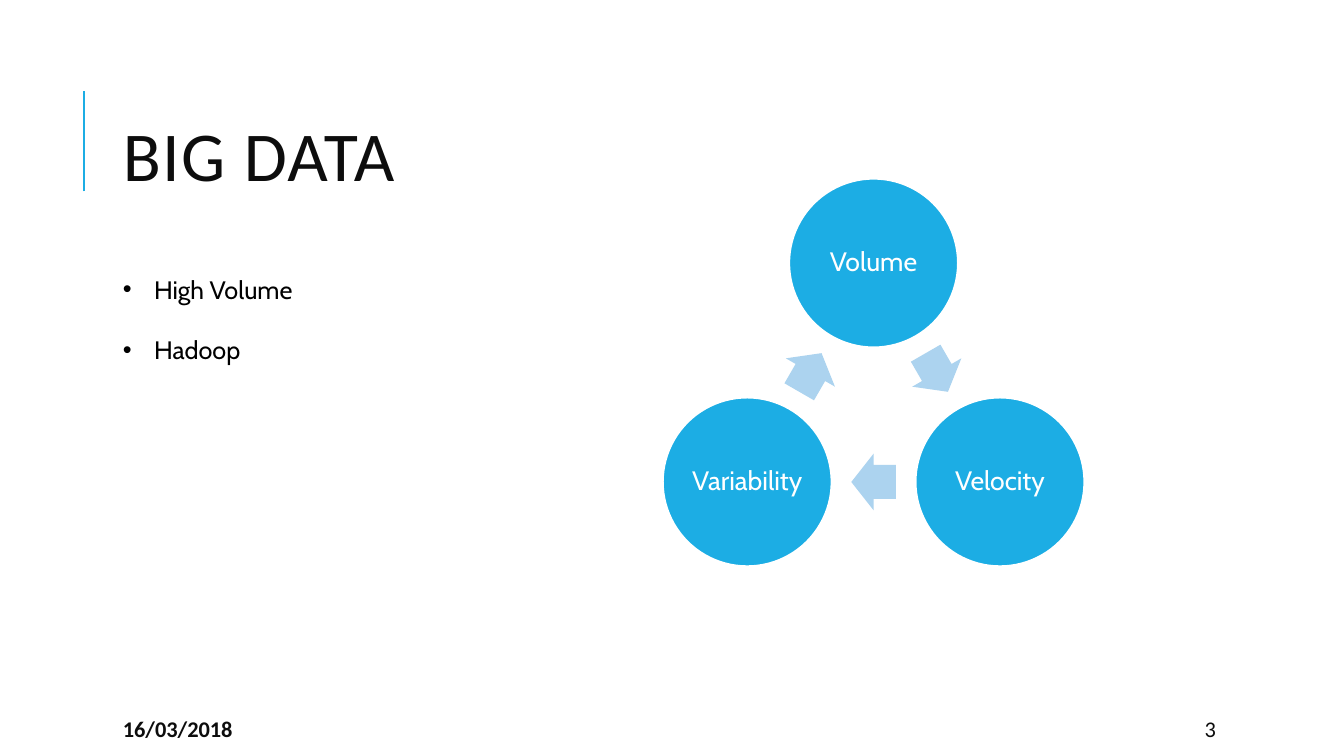
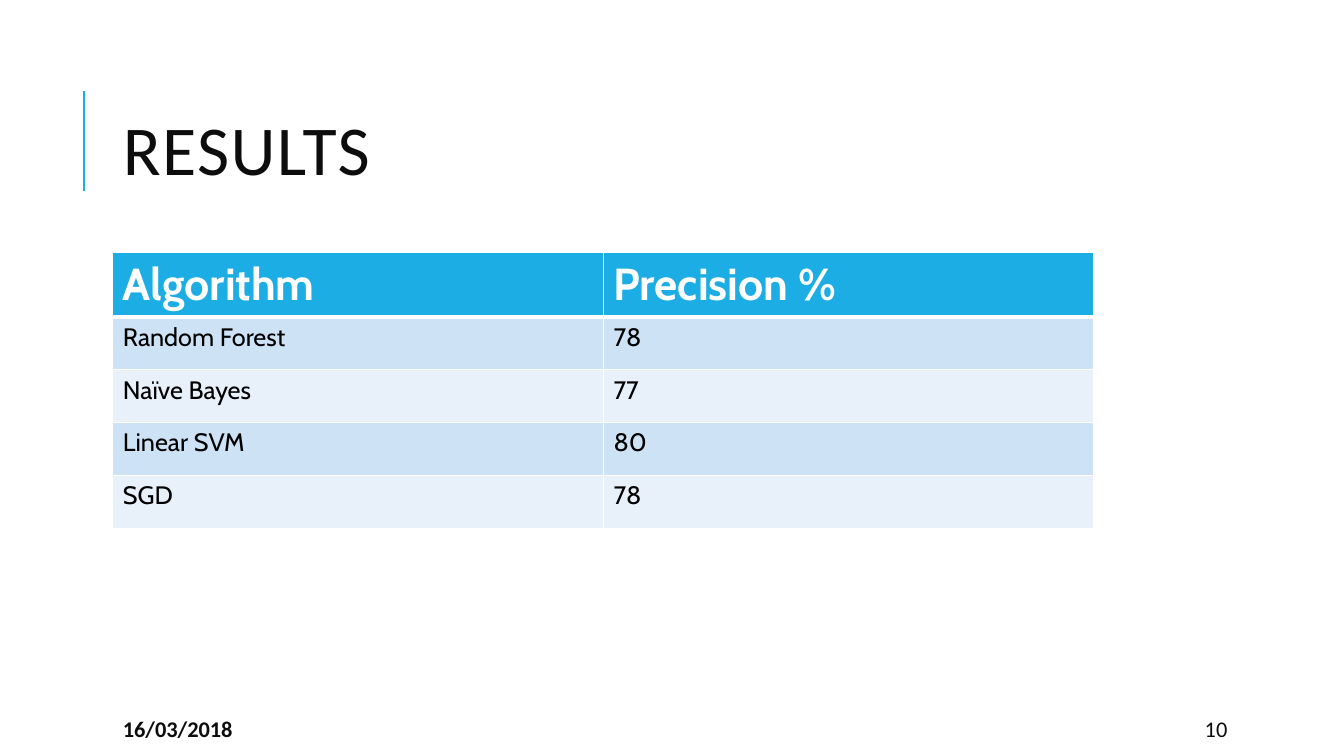
from dataclasses import dataclass
from math import cos, radians, sin

from lxml.etree import SubElement as Sub
from pptx import Presentation
from pptx.dml.color import RGBColor as Rgb
from pptx.enum.shapes import MSO_CONNECTOR as Link, MSO_SHAPE as Kind
from pptx.enum.text import MSO_ANCHOR as Anchor, PP_ALIGN as Align
from pptx.oxml import parse_xml
from pptx.oxml.ns import nsdecls, qn
from pptx.util import Inches, Pt


@dataclass(frozen=True)
class Theme:
    blue: str = "1CADE4"
    pale: str = "ACD3EF"
    bands: tuple = ("CDE3F5", "E8F1FA")
    ink: str = "0D0D0D"
    black: str = "000000"
    white: str = "FFFFFF"
    head: str = "Calibri"
    body: str = "Cabin"
    title: int = 50
    label: int = 32
    node: int = 19
    text: int = 18
    foot: int = 16


theme = Theme()
deck = Presentation()
deck.slide_width = Inches(13.33)
deck.slide_height = Inches(7.5)
col = deck.slide_width / 100
row = deck.slide_height / 100
left = 8.4


def write(para, text, size, color, face, bold=False):
    run = para.add_run()
    run.text = text
    font = run.font
    font.size, font.name, font.bold = Pt(size), face, bold
    font.color.rgb = Rgb.from_string(color)
    return run


def box(slide, x, y, wide, high, anchor=Anchor.MIDDLE):
    area = slide.shapes.add_textbox(
        int(x * col), int(y * row), int(wide * col), int(high * row))
    frame = area.text_frame
    frame.word_wrap = True
    frame.vertical_anchor = anchor
    return frame


slides = []
for title, top, page in (("BIG DATA", 11.5, "3"), ("RESULTS", 10.8, "10")):
    slide = deck.slides.add_slide(deck.slide_layouts[6])
    slides.append(slide)
    bar = slide.shapes.add_connector(
        Link.STRAIGHT, int(6.25 * col), int(25.33 * row), int(6.25 * col), int(12 * row))
    bar.line.color.rgb = Rgb.from_string(theme.blue)
    bar.line.width = Pt(1.5)
    Sub(bar._element.spPr, qn("a:effectLst"))

    para = box(slide, left, top, 86.6, 19.6).paragraphs[0]
    para.line_spacing = 0.8
    run = write(para, title, theme.title, theme.ink, theme.head)
    run.font._element.set("spc", "100")

    for x, wide, text, bold in ((left, 17.7, "16/03/2018", True), (88.9, 8, page, False)):
        para = box(slide, x, 94.4, wide, 4).paragraphs[0]
        write(para, text, theme.foot, theme.ink, theme.head, bold)

data, results = slides

frame = box(data, left, 35.6, 35.2, 17.5, Anchor.TOP)
for i, text in enumerate(("High Volume", "Hadoop")):
    para = frame.add_paragraph() if i else frame.paragraphs[0]
    if i:
        para.space_before = Pt(21.4)
    props = para._p.get_or_add_pPr()
    props.set("marL", str(Inches(0.31)))
    props.set("indent", str(-Inches(0.31)))
    Sub(props, qn("a:buFont"), typeface="Arial")
    Sub(props, qn("a:buChar"), char="•")
    write(para, text, theme.text, theme.black, theme.body)

hub = 65 * col, 54.1 * row
disc = 22.3 * row
ring = 19.3 * row
wide, high = 5.9 * row, 7.5 * row
for i, text in enumerate(("Volume", "Velocity", "Variability")):
    turn = radians(120 * i - 90)
    x, y = hub[0] + ring * cos(turn), hub[1] + ring * sin(turn)
    node = data.shapes.add_shape(
        Kind.OVAL, int(x - disc / 2), int(y - disc / 2), int(disc), int(disc))
    node.shadow.inherit = False
    node.fill.solid()
    node.fill.fore_color.rgb = Rgb.from_string(theme.blue)
    node.line.color.rgb = Rgb.from_string(theme.white)
    node.line.width = Pt(1.25)
    frame = node.text_frame
    frame.word_wrap = False
    frame.vertical_anchor = Anchor.MIDDLE
    frame.margin_left = frame.margin_right = Inches(0.03)
    frame.margin_top = frame.margin_bottom = Inches(0.03)
    para = frame.paragraphs[0]
    para.alignment = Align.CENTER
    para.line_spacing = 0.9
    write(para, text, theme.node, theme.white, theme.body)

    turn += radians(60)
    x, y = hub[0] + ring / 2 * cos(turn), hub[1] + ring / 2 * sin(turn)
    arrow = data.shapes.add_shape(
        Kind.RIGHT_ARROW, int(x - wide / 2), int(y - high / 2), int(wide), int(high))
    arrow.adjustments[0], arrow.adjustments[1] = 0.6, 0.5
    arrow.rotation = 60 + 120 * i
    arrow.shadow.inherit = False
    arrow.fill.solid()
    arrow.fill.fore_color.rgb = Rgb.from_string(theme.pale)
    arrow.line.fill.background()

rows = (
    ("Algorithm", "Precision %"),
    ("Random Forest", "78"),
    ("Naïve Bayes", "77"),
    ("Linear SVM", "80"),
    ("SGD", "78"),
)
table = results.shapes.add_table(
    len(rows), 2, int(left * col), int(33.4 * row), int(73 * col), int(36.3 * row)).table
for r, texts in enumerate(rows):
    table.rows[r].height = int((7 if r else 8.5) * row)
    fill = theme.bands[(r - 1) % 2] if r else theme.blue
    size, color = (theme.text, theme.black) if r else (theme.label, theme.white)
    for c, text in enumerate(texts):
        cell = table.cell(r, c)
        cell.fill.solid()
        cell.fill.fore_color.rgb = Rgb.from_string(fill)
        write(cell.text_frame.paragraphs[0], text, size, color, theme.body, r == 0)
        props = cell._tc.get_or_add_tcPr()
        for n, side in enumerate("LRTB"):
            thick = 3 if (r, side) in ((0, "B"), (1, "T")) else 1
            props.insert(n, parse_xml(
                f'<a:ln{side} {nsdecls("a")} w="{Pt(thick)}"><a:solidFill>'
                f'<a:srgbClr val="{theme.white}"/></a:solidFill></a:ln{side}>'))

deck.save("out.pptx")
